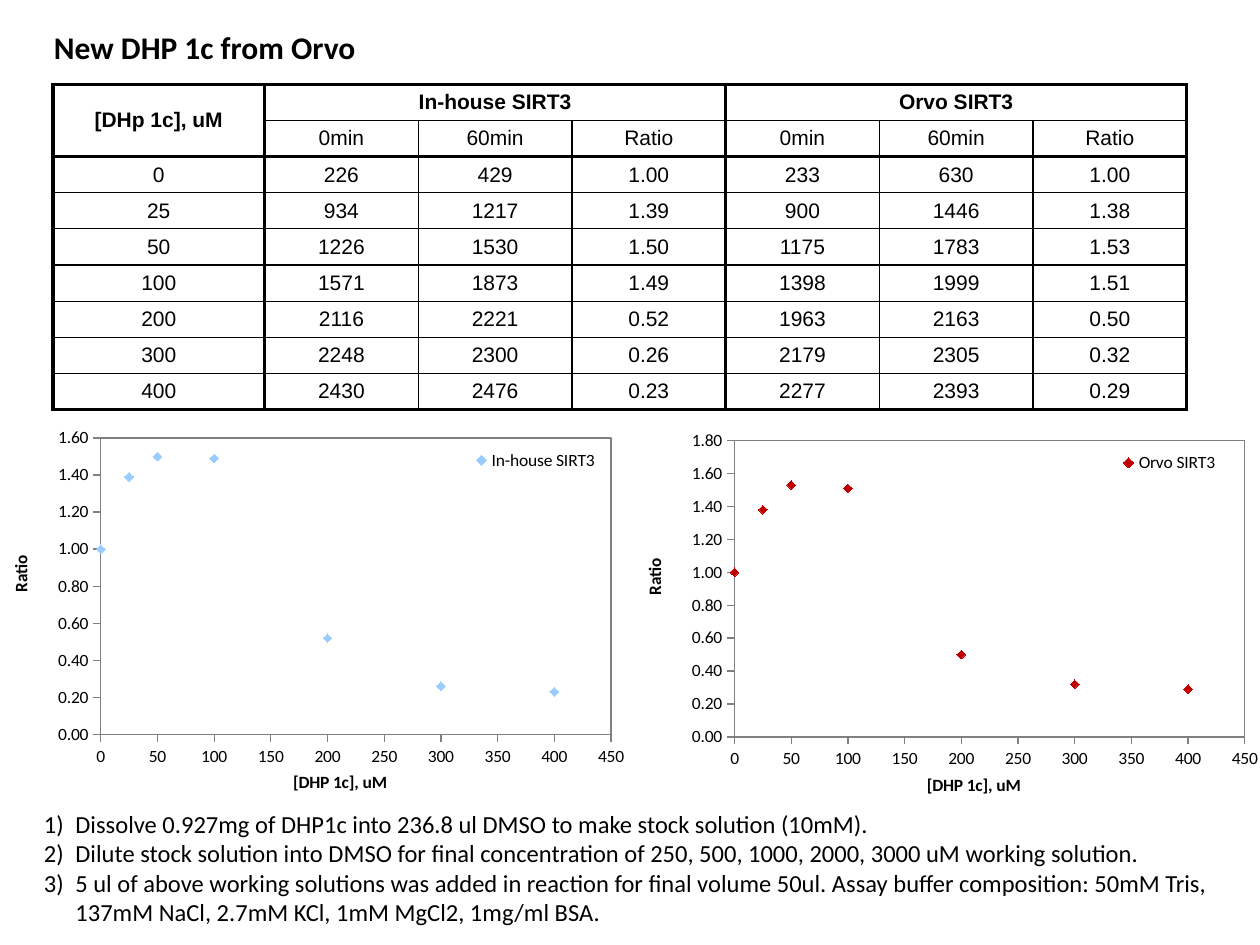
from dataclasses import dataclass

from pptx import Presentation
from pptx.chart.data import XyChartData
from pptx.dml.color import RGBColor
from pptx.enum.chart import XL_CHART_TYPE as ChartType
from pptx.enum.chart import XL_LEGEND_POSITION as LegendPosition
from pptx.enum.chart import XL_MARKER_STYLE as MarkerStyle
from pptx.enum.chart import XL_TICK_MARK as TickMark
from pptx.enum.text import MSO_ANCHOR as Anchor
from pptx.enum.text import PP_ALIGN as Align
from pptx.oxml import parse_xml
from pptx.oxml.ns import nsdecls, qn
from pptx.util import Inches, Pt

BLACK = "000000"
GREY = "808080"
BODY_FONT = "Calibri"
TABLE_FONT = "Arial"
THICK, THIN = 2.25, 0.75
THICK_COLUMN_EDGES = {0, 1, 4, 7}
THICK_ROW_EDGES = {0, 2, 9}
COLUMN_WIDTHS = [1.68] + [1.22] * 6
TABLE_HEIGHT = 2.58

DOSES = [0, 25, 50, 100, 200, 300, 400]


@dataclass
class Assay:
    name: str
    start: list[int]
    end: list[int]
    ratio: list[float]
    marker_color: str
    left: float
    top: float
    ratio_max: float


ASSAYS = [
    Assay("In-house SIRT3",
          [226, 934, 1226, 1571, 2116, 2248, 2430],
          [429, 1217, 1530, 1873, 2221, 2300, 2476],
          [1.00, 1.39, 1.50, 1.49, 0.52, 0.26, 0.23],
          "99CCFF", 0.05, 3.33, 1.6),
    Assay("Orvo SIRT3",
          [233, 900, 1175, 1398, 1963, 2179, 2277],
          [630, 1446, 1783, 1999, 2163, 2305, 2393],
          [1.00, 1.38, 1.53, 1.51, 0.50, 0.32, 0.29],
          "C00000", 5.08, 3.35, 1.8),
]

STEPS = [
    "Dissolve 0.927mg of DHP1c into 236.8 ul DMSO to make stock solution (10mM).",
    "Dilute stock solution into DMSO for final concentration of 250, 500, 1000, 2000, "
    "3000 uM working solution.",
    "5 ul of above working solutions was added in reaction for final volume 50ul. "
    "Assay buffer composition: 50mM Tris, 137mM NaCl, 2.7mM KCl, 1mM MgCl2, 1mg/ml BSA.",
]


def color(value: str) -> RGBColor:
    return RGBColor.from_string(value)


def write(para, text: str, *, size: float, font: str = BODY_FONT,
          bold: bool = False, align=None) -> None:
    span = para.add_run()
    span.text = text
    span.font.size = Pt(size)
    span.font.name = font
    span.font.bold = bold
    span.font.color.rgb = color(BLACK)
    if align is not None:
        para.alignment = align


def add_text_box(page, left: float, top: float, width: float, height: float):
    box = page.shapes.add_textbox(Inches(left), Inches(top), Inches(width), Inches(height))
    box.text_frame.word_wrap = True
    return box.text_frame


def set_borders(cell, row: int, column: int) -> None:
    """Draw the four edges, thick around each block of the table."""
    bottom = row + (cell.span_height if cell.is_merge_origin else 1)
    right = column + (cell.span_width if cell.is_merge_origin else 1)
    edges = {
        "lnL": column in THICK_COLUMN_EDGES,
        "lnR": right in THICK_COLUMN_EDGES,
        "lnT": row in THICK_ROW_EDGES,
        "lnB": bottom in THICK_ROW_EDGES,
    }
    properties = cell._tc.get_or_add_tcPr()
    for tag, thick in edges.items():
        width = Pt(THICK if thick else THIN)
        properties.append(parse_xml(
            f'<a:{tag} {nsdecls("a")} w="{width}"><a:solidFill>'
            f'<a:srgbClr val="{BLACK}"/></a:solidFill></a:{tag}>'))


def add_results_table(page) -> None:
    rows = [["[DHp 1c], uM"], [""]]
    for assay in ASSAYS:
        rows[0] += [assay.name, "", ""]
        rows[1] += ["0min", "60min", "Ratio"]
    for index, dose in enumerate(DOSES):
        row = [str(dose)]
        for assay in ASSAYS:
            row += [str(assay.start[index]), str(assay.end[index]),
                    f"{assay.ratio[index]:.2f}"]
        rows.append(row)

    table = page.shapes.add_table(
        len(rows), len(COLUMN_WIDTHS), Inches(0.42), Inches(0.67),
        Inches(sum(COLUMN_WIDTHS)), Inches(TABLE_HEIGHT)).table
    table.first_row = table.horz_banding = False
    for column, width in zip(table.columns, COLUMN_WIDTHS):
        column.width = Inches(width)
    table.cell(0, 0).merge(table.cell(1, 0))
    for first in (1, 4):
        table.cell(0, first).merge(table.cell(0, first + 2))

    for row, texts in enumerate(rows):
        for column, text in enumerate(texts):
            cell = table.cell(row, column)
            cell.margin_left = cell.margin_right = cell.margin_top = cell.margin_bottom = 0
            cell.vertical_anchor = Anchor.MIDDLE
            set_borders(cell, row, column)
            cell.fill.background()
            if text:
                write(cell.text_frame.paragraphs[0], text, size=12, font=TABLE_FONT,
                      bold=row == 0, align=Align.CENTER)


def place(part, x: float, y: float, size=None, inner: bool = False) -> None:
    """Give a chart part a manual layout, in fractions of the chart."""
    values = {"layoutTarget": "inner"} if inner else {}
    values |= {"xMode": "edge", "yMode": "edge", "x": x, "y": y}
    if size:
        values |= {"w": size[0], "h": size[1]}
    items = "".join(f'<c:{tag} val="{value}"/>' for tag, value in values.items())
    layout = parse_xml(f'<c:layout {nsdecls("c")}><c:manualLayout>{items}'
                       '</c:manualLayout></c:layout>')
    for old in part.findall(qn("c:layout")):
        part.remove(old)
    overlay = part.find(qn("c:overlay"))
    if overlay is None:
        part.insert(0, layout)
    else:
        overlay.addprevious(layout)


def format_axis(axis, title: str, maximum: float, step: float, number_format: str,
                title_left: float, title_top: float) -> None:
    axis.minimum_scale, axis.maximum_scale, axis.major_unit = 0, maximum, step
    axis.has_major_gridlines = False
    axis.major_tick_mark = TickMark.OUTSIDE
    axis.minor_tick_mark = TickMark.NONE
    axis.tick_labels.number_format = number_format
    axis.tick_labels.number_format_is_linked = False
    axis.format.line.color.rgb = color(GREY)
    axis.format.line.width = Pt(THIN)
    write(axis.axis_title.text_frame.paragraphs[0], title, size=10, bold=True)
    place(axis.axis_title._element, title_left, title_top)


def add_ratio_chart(page, assay: Assay) -> None:
    data = XyChartData()
    points = data.add_series(assay.name)
    for dose, ratio in zip(DOSES, assay.ratio):
        points.add_data_point(dose, ratio)
    chart = page.shapes.add_chart(ChartType.XY_SCATTER, Inches(assay.left), Inches(assay.top),
                                  Inches(5), Inches(3), data).chart
    chart.has_title = False
    chart.font.size, chart.font.name = Pt(10), BODY_FONT
    chart.font.color.rgb = color(BLACK)
    format_axis(chart.category_axis, "[DHP 1c], uM", 450, 50, "General", 0.45, 0.94)
    format_axis(chart.value_axis, "Ratio", assay.ratio_max, 0.2, "0.00", 0, 0.36)

    chart.has_legend = True
    chart.legend.position = LegendPosition.RIGHT
    chart.legend.include_in_layout = False
    place(chart.legend._element, 0.73, 0.08, (0.22, 0.06))

    plot = chart.plots[0]
    plot.vary_by_categories = False
    series = plot.series[0]
    series.format.line.fill.background()
    series.marker.style, series.marker.size = MarkerStyle.DIAMOND, 5
    series.marker.format.fill.solid()
    series.marker.format.fill.fore_color.rgb = color(assay.marker_color)
    series.marker.format.line.color.rgb = color(assay.marker_color)

    plot_area = chart._chartSpace.chart.plotArea
    place(plot_area, 0.15, 0.05, (0.81, 0.8), inner=True)
    plot_area.append(parse_xml(
        f'<c:spPr {nsdecls("c", "a")}><a:noFill/><a:ln w="{Pt(THIN)}"><a:solidFill>'
        f'<a:srgbClr val="{GREY}"/></a:solidFill></a:ln></c:spPr>'))


def add_steps(page) -> None:
    frame = add_text_box(page, 0.25, 6.37, 9.58, 1.04)
    for index, step in enumerate(STEPS):
        para = frame.add_paragraph() if index else frame.paragraphs[0]
        write(para, step, size=14)
        properties = para._p.get_or_add_pPr()
        properties.set("marL", str(Inches(0.25)))
        properties.set("indent", str(-Inches(0.25)))
        properties.append(parse_xml(f'<a:buAutoNum {nsdecls("a")} type="arabicParenR"/>'))


def main() -> None:
    deck = Presentation()
    deck.slide_width, deck.slide_height = Inches(10), Inches(7.5)
    page = deck.slides.add_slide(deck.slide_layouts[6])
    title = add_text_box(page, 0.33, 0.17, 3, 0.4)
    write(title.paragraphs[0], "New DHP 1c from Orvo", size=18, bold=True)
    add_results_table(page)
    for assay in ASSAYS:
        add_ratio_chart(page, assay)
    add_steps(page)
    deck.save("out.pptx")


if __name__ == "__main__":
    main()
